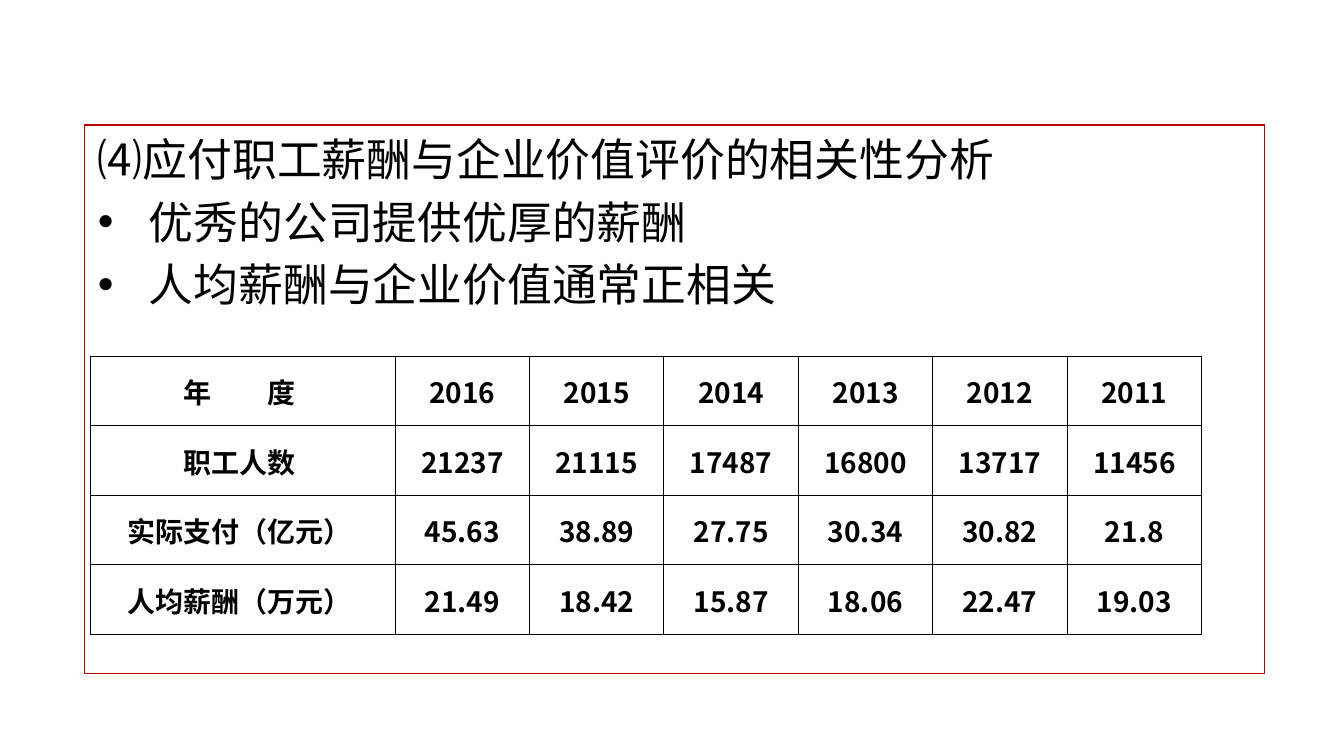
from lxml.etree import SubElement
from pptx import Presentation
from pptx.dml.color import RGBColor
from pptx.enum.shapes import MSO_SHAPE
from pptx.enum.text import MSO_ANCHOR, PP_ALIGN
from pptx.oxml.ns import qn
from pptx.util import Inches, Pt

HEADING = "⑷应付职工薪酬与企业价值评价的相关性分析"
BULLETS = ["优秀的公司提供优厚的薪酬", "人均薪酬与企业价值通常正相关"]
ROWS = [
    ["年度", "2016", "2015", "2014", "2013", "2012", "2011"],
    ["职工人数", "21237", "21115", "17487", "16800", "13717", "11456"],
    ["实际支付（亿元）", "45.63", "38.89", "27.75", "30.34", "30.82", "21.8"],
    ["人均薪酬（万元）", "21.49", "18.42", "15.87", "18.06", "22.47", "19.03"],
]


def color(value):
    return RGBColor.from_string(value)


def apply(target, values):
    for name, value in values.items():
        setattr(target, name, value)


class Deck:
    ink = "000000"
    accent = "C00000"
    background = "FFFFFF"
    body = {"name": "Arial", "size": Pt(24)}
    cell = {"name": "Noto Sans CJK SC", "size": Pt(15), "bold": True}

    def __init__(self, width, height):
        self.prs = Presentation()
        apply(self.prs, {"slide_width": Inches(width), "slide_height": Inches(height)})
        self.s = self.prs.slides.add_slide(self.prs.slide_layouts[6])
        fill = self.s.background.fill
        fill.solid()
        fill.fore_color.rgb = color(self.background)

    def run(self, p, text, style, gap=0):
        r = p.add_run()
        r.text = text
        apply(r.font, style)
        r.font.color.rgb = color(self.ink)
        rPr = r._r.get_or_add_rPr()
        SubElement(rPr, qn("a:ea"), typeface=style["name"])
        if gap:
            rPr.set("spc", str(gap * 100))

    def outline(self, box, heading, bullets):
        sp = self.s.shapes.add_shape(MSO_SHAPE.RECTANGLE, *map(Inches, box))
        sp.shadow.inherit = False
        sp.fill.background()
        sp.line.color.rgb = color(self.accent)
        sp.line.width = Pt(0.75)
        tf = sp.text_frame
        apply(tf, {"word_wrap": True, "vertical_anchor": MSO_ANCHOR.TOP})
        for i, text in enumerate([heading, *bullets]):
            p = tf.add_paragraph() if i else tf.paragraphs[0]
            p.alignment = PP_ALIGN.LEFT
            pPr = p._p.get_or_add_pPr()
            pPr.set("marL", str(Inches(0.38)))
            pPr.set("indent", str(Inches(-0.38)))
            if i:
                p.space_before = Pt(4.8)
                SubElement(pPr, qn("a:buFont"), typeface="Arial")
                SubElement(pPr, qn("a:buChar"), char="•")
            self.run(p, text, self.body)

    def borders(self, cell):
        tcPr = cell._tc.get_or_add_tcPr()
        for i, side in enumerate(("lnL", "lnR", "lnT", "lnB")):
            ln = SubElement(tcPr, qn(f"a:{side}"), w=str(Pt(0.5)))
            tcPr.insert(i, ln)
            SubElement(SubElement(ln, qn("a:solidFill")), qn("a:srgbClr"), val=self.ink)

    def table(self, left, top, widths, height, rows):
        box = map(Inches, (left, top, sum(widths), height))
        table = self.s.shapes.add_table(len(rows), len(widths), *box).table
        apply(table, {"first_row": False, "horz_banding": False})
        for column, width in zip(table.columns, widths):
            column.width = Inches(width)
        for i, row in enumerate(rows):
            for j, text in enumerate(row):
                cell = table.cell(i, j)
                apply(cell, {
                    "vertical_anchor": MSO_ANCHOR.MIDDLE,
                    "margin_left": Inches(0.01),
                    "margin_right": Inches(0.01 if j else 0.06),
                    "margin_top": Inches(0.01),
                    "margin_bottom": 0,
                })
                cell.fill.background()
                self.borders(cell)
                p = cell.text_frame.paragraphs[0]
                p.alignment = PP_ALIGN.CENTER
                if text == "年度":
                    self.run(p, text[0], self.cell, gap=30)
                    text = text[1]
                self.run(p, text, self.cell)


def main():
    deck = Deck(10, 10 * 9 / 16)
    deck.outline((0.63, 0.93, 8.78, 4.08), HEADING, BULLETS)
    deck.table(0.67, 2.65, [2.27] + [1] * 6, 2.07, ROWS)
    deck.prs.save("out.pptx")


if __name__ == "__main__":
    main()
